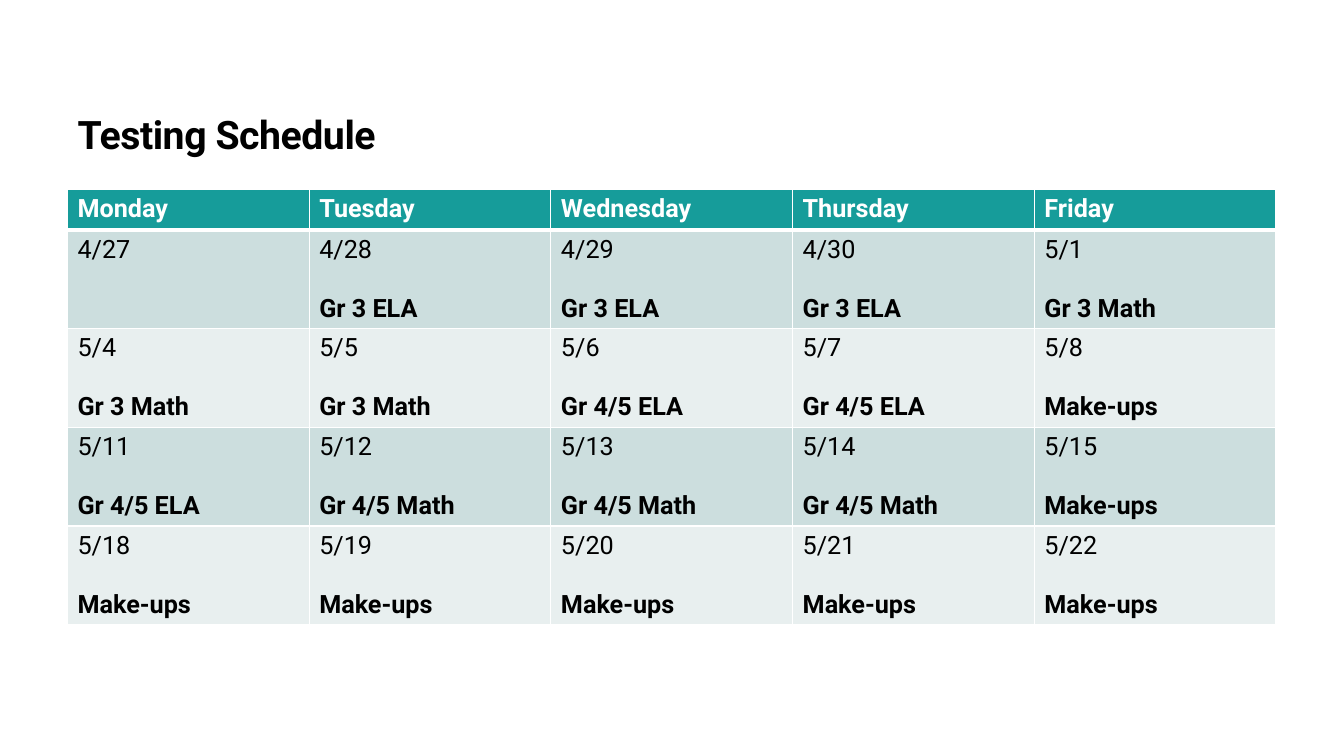
from lxml import etree
from pptx import Presentation
from pptx.dml.color import RGBColor
from pptx.enum.text import MSO_ANCHOR, PP_ALIGN
from pptx.oxml.ns import qn
from pptx.util import Pt

LEFT, BOTTOM = PP_ALIGN.LEFT, MSO_ANCHOR.BOTTOM
BLACK = RGBColor(0x00, 0x00, 0x00)
WHITE = RGBColor(0xFF, 0xFF, 0xFF)
TEAL = RGBColor(0x16, 0x9C, 0x9A)
BANDS = [RGBColor(0xCC, 0xDE, 0xDE), RGBColor(0xE8, 0xEF, 0xEF)]

DAYS = ["Monday", "Tuesday", "Wednesday", "Thursday", "Friday"]
WEEKS = [
    [("4/27", ""), ("4/28", "Gr 3 ELA"), ("4/29", "Gr 3 ELA"),
     ("4/30", "Gr 3 ELA"), ("5/1", "Gr 3 Math")],
    [("5/4", "Gr 3 Math"), ("5/5", "Gr 3 Math"), ("5/6", "Gr 4/5 ELA"),
     ("5/7", "Gr 4/5 ELA"), ("5/8", "Make-ups")],
    [("5/11", "Gr 4/5 ELA"), ("5/12", "Gr 4/5 Math"), ("5/13", "Gr 4/5 Math"),
     ("5/14", "Gr 4/5 Math"), ("5/15", "Make-ups")],
    [(f"5/{day}", "Make-ups") for day in range(18, 23)],
]
X, WIDTH = 48.2, 863.3
HEADER_H, WEEK_H = 29.2, 70.5


def add_text(p, text, size=18, color=BLACK, bold=False, before=0):
    p.alignment = LEFT
    p.space_before = Pt(before)
    r = p.add_run()
    r.text = text
    r.font.name = "Roboto"
    r.font.size = Pt(size)
    r.font.bold = bold
    r.font.color.rgb = color
    return r


def style_cell(cell, fill, top, bottom):
    tc_pr = cell._tc.get_or_add_tcPr()
    for side, width in (("lnL", 1), ("lnR", 1), ("lnT", top), ("lnB", bottom)):
        ln = etree.SubElement(tc_pr, qn(f"a:{side}"), w=str(Pt(width)))
        line_fill = etree.SubElement(ln, qn("a:solidFill"))
        etree.SubElement(line_fill, qn("a:srgbClr"), val=str(WHITE))
    cell.fill.solid()
    cell.fill.fore_color.rgb = fill


prs = Presentation()
prs.slide_width, prs.slide_height = Pt(960), Pt(540)
s = prs.slides.add_slide(prs.slide_layouts[5])

# Title
title = s.shapes.title
title.left, title.top, title.width, title.height = Pt(X), Pt(40.3), Pt(WIDTH), Pt(76.3)
tf = title.text_frame
tf.vertical_anchor = BOTTOM
p = tf.paragraphs[0]
p.line_spacing = 0.95
r = add_text(p, "Testing Schedule", size=28, bold=True)
r.font._element.set("spc", "-30")

# Schedule table
table = s.shapes.add_table(len(WEEKS) + 1, len(DAYS), Pt(X), Pt(135), Pt(WIDTH),
                           Pt(HEADER_H + len(WEEKS) * WEEK_H)).table
for column in table.columns:
    column.width = Pt(WIDTH / len(DAYS))

# Weekday header
table.rows[0].height = Pt(HEADER_H)
for col, day in enumerate(DAYS):
    cell = table.cell(0, col)
    add_text(cell.text_frame.paragraphs[0], day, color=WHITE, bold=True)
    style_cell(cell, TEAL, top=1, bottom=3)

# Weeks: date above, test below
for row, week in enumerate(WEEKS, start=1):
    table.rows[row].height = Pt(WEEK_H)
    for col, (date, test) in enumerate(week):
        cell = table.cell(row, col)
        tf = cell.text_frame
        add_text(tf.paragraphs[0], date)
        if test:
            add_text(tf.add_paragraph(), test, bold=True, before=21)
        style_cell(cell, BANDS[(row - 1) % 2], top=3 if row == 1 else 1, bottom=1)

prs.save("out.pptx")
